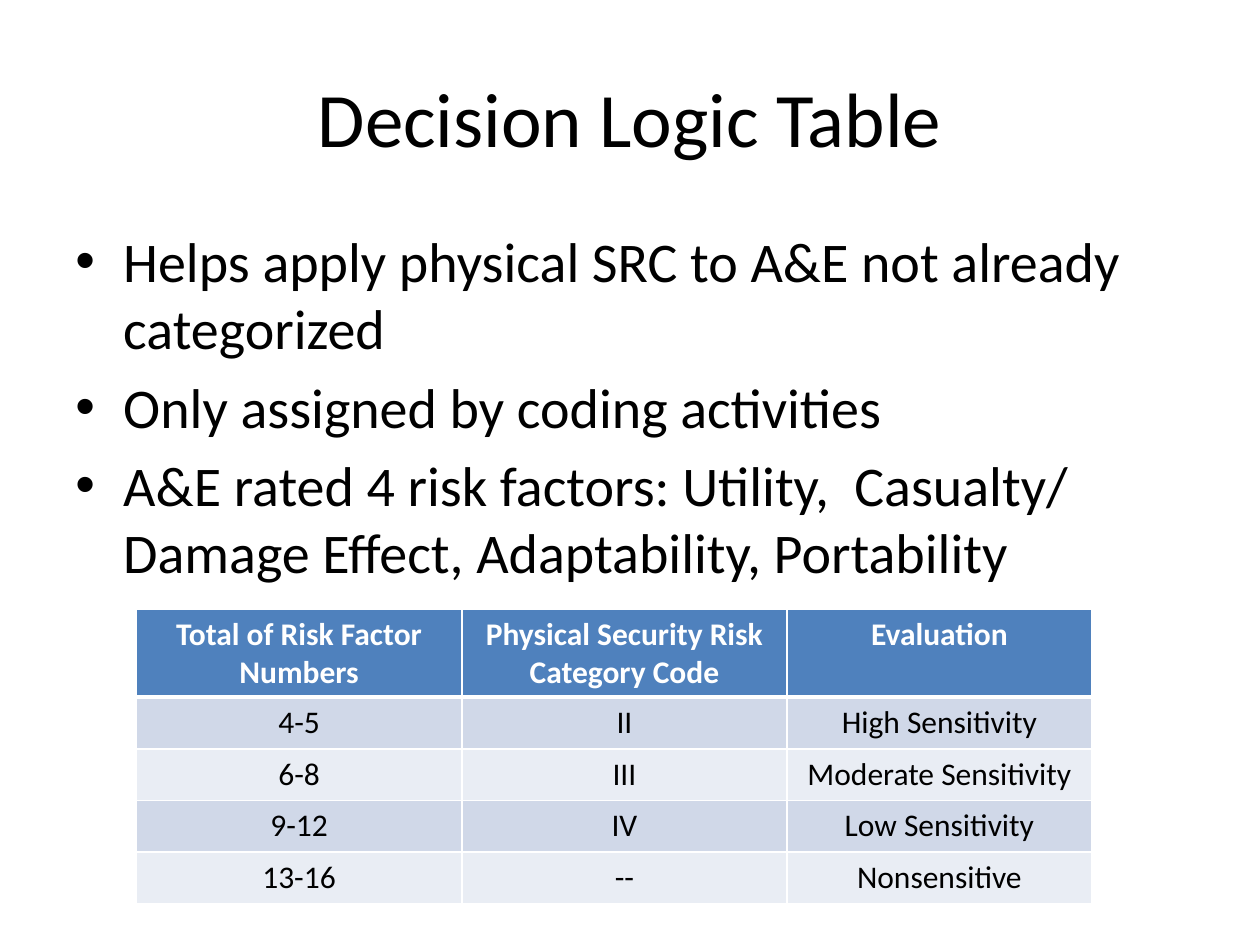
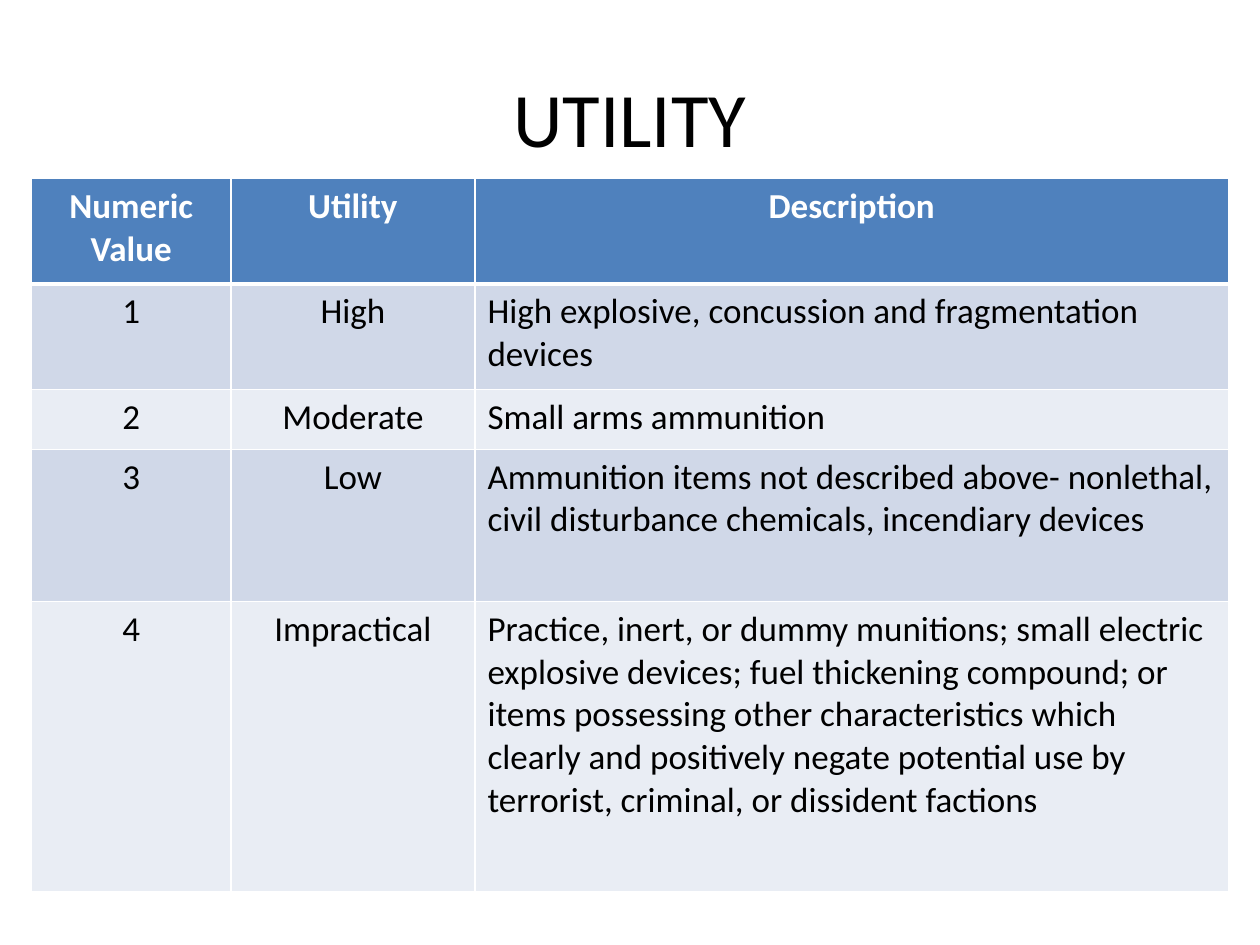
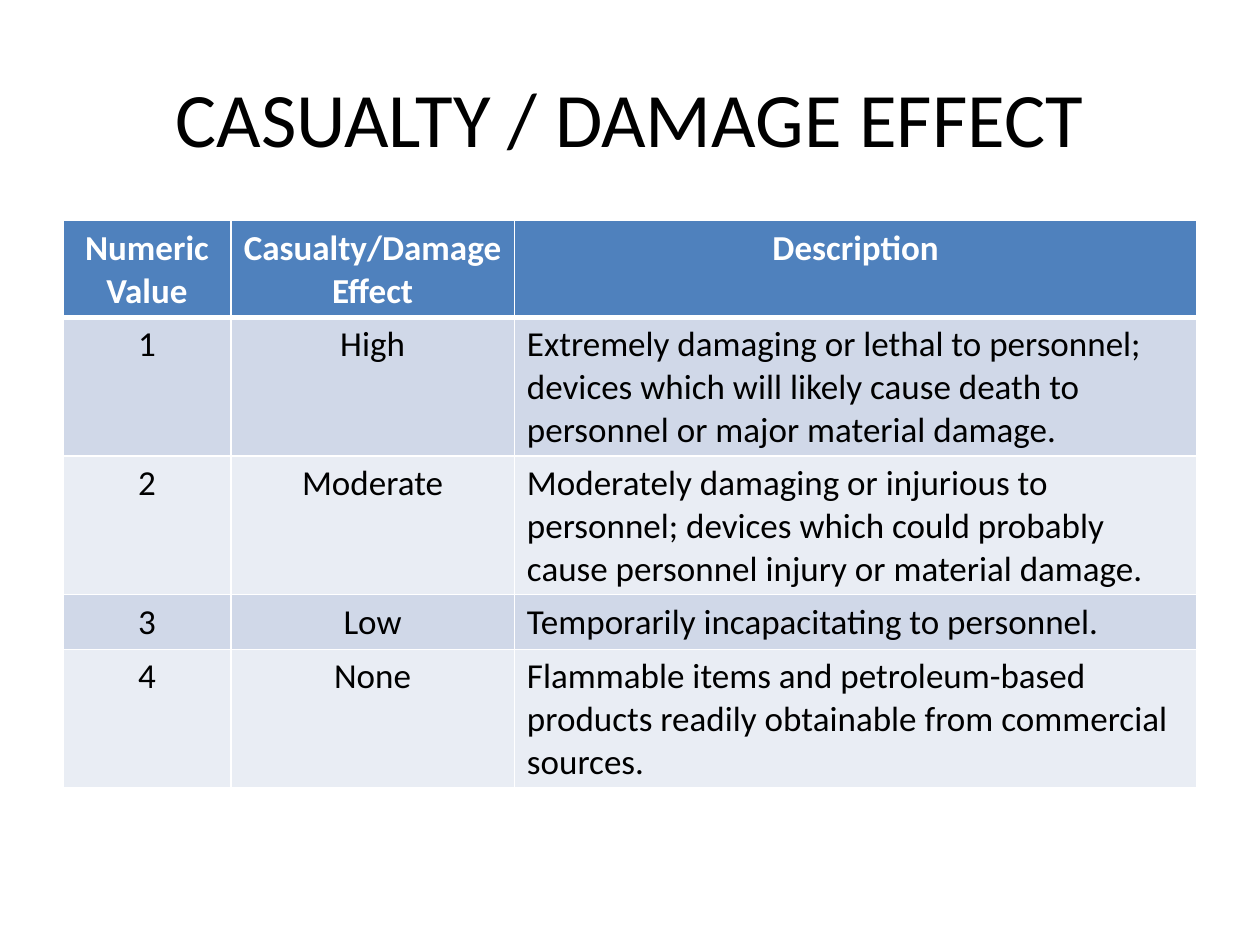
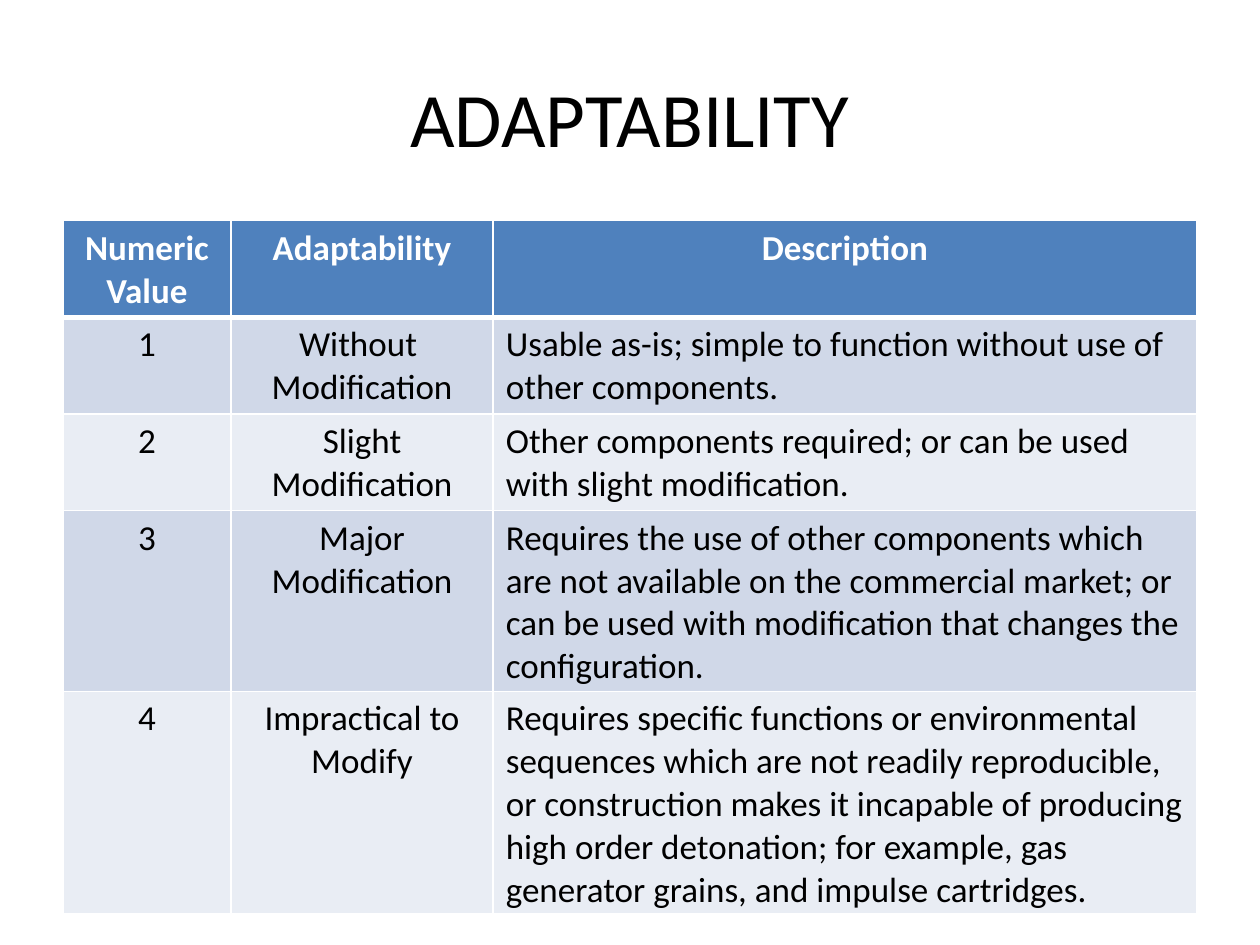
from dataclasses import dataclass

from lxml.etree import SubElement
from pptx import Presentation
from pptx.dml.color import RGBColor
from pptx.enum.text import MSO_ANCHOR, PP_ALIGN
from pptx.oxml.ns import qn
from pptx.slide import Slide
from pptx.table import _Cell
from pptx.text.text import TextFrame, _Paragraph
from pptx.util import Inches, Length, Pt

SLIDE_WIDTH = Inches(10)
SLIDE_HEIGHT = Inches(7.5)
GRID_COLUMNS = 40  # square grid: 40 columns by 30 rows
UNIT = SLIDE_WIDTH / GRID_COLUMNS

FONT = "Calibri"
BLACK = RGBColor(0x00, 0x00, 0x00)
WHITE = RGBColor(0xFF, 0xFF, 0xFF)
HEADER_BLUE = RGBColor(0x4F, 0x81, 0xBD)
BANDS = (RGBColor(0xD0, 0xD8, 0xE8), RGBColor(0xE9, 0xED, 0xF4))

TITLE_SIZE = 44
BULLET_SIZE = 32
THIN_BORDER = 1
HEADER_BORDER = 3
MIN_ROW = 1.64
BULLET_INDENT = Inches(0.38)


@dataclass(frozen=True)
class Area:
    """A rectangle in grid units."""

    left: float
    top: float
    width: float
    height: float

    def lengths(self) -> tuple[Length, ...]:
        return tuple(grid(value) for value in (self.left, self.top, self.width, self.height))


@dataclass(frozen=True)
class RiskTable:
    area: Area
    columns: tuple[float, ...]
    rows: tuple[tuple[str, ...], ...]
    row_heights: tuple[float, ...] = (MIN_ROW,) * 5
    size: int = 20
    centered_columns: int = 2


@dataclass(frozen=True)
class Page:
    title: str
    table: RiskTable
    bullets: tuple[str, ...] = ()


TITLE_AREA = Area(2, 1.2, 36, 5)
BODY_AREA = Area(2, 7, 36, 19.8)

PAGES = (
    Page(
        "Decision Logic Table",
        RiskTable(
            Area(4.33, 19.33, 30.33, 9.28),
            (10.33, 10.33, 9.67),
            (
                ("Total of Risk Factor Numbers", "Physical Security Risk Category Code", "Evaluation"),
                ("4-5", "II", "High Sensitivity"),
                ("6-8", "III", "Moderate Sensitivity"),
                ("9-12", "IV", "Low Sensitivity"),
                ("13-16", "--", "Nonsensitive"),
            ),
            size=18,
            centered_columns=3,
        ),
        (
            "Helps apply physical SRC to A&E not already categorized",
            "Only assigned by coding activities",
            "A&E rated 4 risk factors: Utility,  Casualty/ Damage Effect, Adaptability, Portability",
        ),
    ),
    Page(
        "UTILITY",
        RiskTable(
            Area(1, 5.67, 38, 22.68),
            (6.33, 7.75, 23.92),
            (
                ("Numeric Value", "Utility", "Description"),
                ("1", "High", "High explosive, concussion and fragmentation devices"),
                ("2", "Moderate", "Small arms ammunition"),
                ("3", "Low", "Ammunition items not described above- nonlethal, civil disturbance "
                 "chemicals, incendiary devices"),
                ("4", "Impractical", "Practice, inert, or dummy munitions; small electric explosive "
                 "devices; fuel thickening compound; or items possessing other characteristics which "
                 "clearly and positively negate potential use by terrorist, criminal, or dissident "
                 "factions"),
            ),
            row_heights=(3.35, 3.35, 1.9, 4.83, 9.2),
        ),
    ),
    Page(
        "CASUALTY / DAMAGE EFFECT",
        RiskTable(
            Area(2, 7, 36, 18),
            (5.33, 9, 21.67),
            (
                ("Numeric Value", "Casualty/Damage Effect", "Description"),
                ("1", "High", "Extremely damaging or lethal to personnel; devices which will likely "
                 "cause death to personnel or major material damage."),
                ("2", "Moderate", "Moderately damaging or injurious to personnel; devices which could "
                 "probably cause personnel injury or material damage."),
                ("3", "Low", "Temporarily incapacitating to personnel."),
                ("4", "None", "Flammable items and petroleum-based products readily obtainable from "
                 "commercial sources."),
            ),
        ),
    ),
    Page(
        "ADAPTABILITY",
        RiskTable(
            Area(2, 7, 36, 22),
            (5.33, 8.33, 22.33),
            (
                ("Numeric Value", "Adaptability", "Description"),
                ("1", "Without  Modification", "Usable as-is; simple to function without use of other "
                 "components."),
                ("2", "Slight Modification", "Other components required; or can be used with slight "
                 "modification."),
                ("3", "Major Modification", "Requires the use of other components which are not "
                 "available on the commercial market; or can be used with modification that changes "
                 "the configuration."),
                ("4", "Impractical to Modify", "Requires specific functions or environmental sequences "
                 "which are not readily reproducible, or construction makes it incapable of producing "
                 "high order detonation; for example, gas generator grains, and impulse cartridges."),
            ),
        ),
    ),
)


def grid(units: float) -> Length:
    return Length(round(units * UNIT))


def add_run(paragraph: _Paragraph, text: str, size: int,
            color: RGBColor = BLACK, bold: bool = False) -> None:
    run = paragraph.add_run()
    run.text = text
    run.font.name = FONT
    run.font.size = Pt(size)
    run.font.bold = bold
    run.font.color.rgb = color


def add_text_frame(slide: Slide, area: Area) -> TextFrame:
    text_frame = slide.shapes.add_textbox(*area.lengths()).text_frame
    text_frame.word_wrap = True
    return text_frame


def add_title(slide: Slide, title: str) -> None:
    text_frame = add_text_frame(slide, TITLE_AREA)
    text_frame.vertical_anchor = MSO_ANCHOR.MIDDLE
    paragraph = text_frame.paragraphs[0]
    paragraph.alignment = PP_ALIGN.CENTER
    add_run(paragraph, title, TITLE_SIZE)


def add_bullets(slide: Slide, bullets: tuple[str, ...]) -> None:
    text_frame = add_text_frame(slide, BODY_AREA)
    for index, bullet in enumerate(bullets):
        paragraph = text_frame.add_paragraph() if index else text_frame.paragraphs[0]
        paragraph.space_before = Pt(BULLET_SIZE * 0.2)
        properties = paragraph._p.get_or_add_pPr()
        properties.set("marL", str(BULLET_INDENT))
        properties.set("indent", str(-BULLET_INDENT))
        SubElement(properties, qn("a:buFont"), typeface="Arial")
        SubElement(properties, qn("a:buChar"), char="•")
        add_run(paragraph, bullet, BULLET_SIZE)


def set_borders(cell: _Cell, top: int, bottom: int) -> None:
    """Draw white borders; call before filling, as lines come first in the XML."""
    properties = cell._tc.get_or_add_tcPr()
    widths = {"lnL": THIN_BORDER, "lnR": THIN_BORDER, "lnT": top, "lnB": bottom}
    for tag, width in widths.items():
        line = SubElement(properties, qn(f"a:{tag}"), w=str(Pt(width)))
        fill = SubElement(line, qn("a:solidFill"))
        SubElement(fill, qn("a:srgbClr"), val=str(WHITE))


def add_risk_table(slide: Slide, risk_table: RiskTable) -> None:
    frame = slide.shapes.add_table(
        len(risk_table.rows), len(risk_table.columns), *risk_table.area.lengths())
    table = frame.table
    for column, width in zip(table.columns, risk_table.columns):
        column.width = grid(width)
    for row, height in zip(table.rows, risk_table.row_heights):
        row.height = grid(height)
    frame.height = grid(risk_table.area.height)

    for row_index, texts in enumerate(risk_table.rows):
        is_header = row_index == 0
        for column_index, text in enumerate(texts):
            cell = table.cell(row_index, column_index)
            set_borders(cell,
                        top=HEADER_BORDER if row_index == 1 else THIN_BORDER,
                        bottom=HEADER_BORDER if is_header else THIN_BORDER)
            cell.fill.solid()
            cell.fill.fore_color.rgb = HEADER_BLUE if is_header else BANDS[(row_index - 1) % 2]
            paragraph = cell.text_frame.paragraphs[0]
            is_centered = is_header or column_index < risk_table.centered_columns
            paragraph.alignment = PP_ALIGN.CENTER if is_centered else PP_ALIGN.LEFT
            add_run(paragraph, text, risk_table.size, WHITE if is_header else BLACK, is_header)


def main() -> None:
    presentation = Presentation()
    presentation.slide_width = SLIDE_WIDTH
    presentation.slide_height = SLIDE_HEIGHT
    blank_layout = presentation.slide_layouts[6]
    for page in PAGES:
        slide = presentation.slides.add_slide(blank_layout)
        add_title(slide, page.title)
        if page.bullets:
            add_bullets(slide, page.bullets)
        add_risk_table(slide, page.table)
    presentation.save("out.pptx")


if __name__ == "__main__":
    main()
